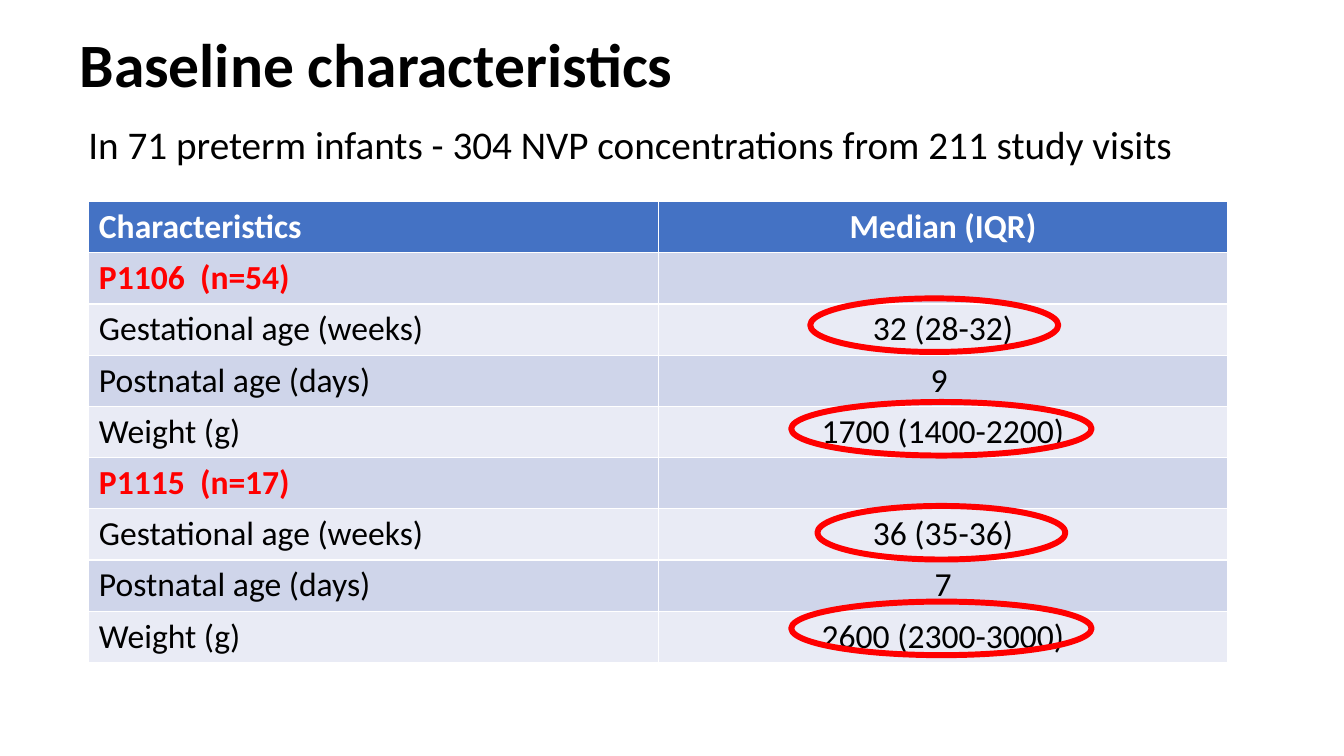
from dataclasses import dataclass
from lxml.etree import SubElement
from pptx import Presentation
from pptx.dml.color import RGBColor
from pptx.enum.shapes import MSO_SHAPE
from pptx.enum.text import MSO_ANCHOR, MSO_AUTO_SIZE, PP_ALIGN
from pptx.oxml.ns import qn
from pptx.util import Cm, Pt


@dataclass(frozen=True)
class Theme:
    font: str = "Calibri"
    title: int = 44
    body: int = 28
    cell: int = 24
    ring: float = 4.25
    black: str = "000000"
    white: str = "FFFFFF"
    red: str = "FF0000"
    head: str = "4472C4"
    bands: tuple = ("E9EBF5", "CFD5EA")


theme = Theme()


def style(para, size, color, bold=False):
    font = para.font
    font.name, font.size, font.bold = theme.font, Pt(size), bold
    font.color.rgb = RGBColor.from_string(color)


def place(shape, left, top, width, height):
    shape.left, shape.top = Cm(left), Cm(top)
    shape.width, shape.height = Cm(width), Cm(height)


deck = Presentation()
deck.slide_width, deck.slide_height = Cm(33.87), Cm(19.05)
slide = deck.slides.add_slide(deck.slide_layouts[1])

title = slide.shapes.title
body = slide.placeholders[1]
place(title, 1.75, -0.13, 29.21, 3.68)
place(body, 1.75, 3.05, 30.38, 16.38)
title.text_frame.text = "Baseline characteristics"
body.text_frame.text = " In 71 preterm infants - 304 NVP concentrations from 211 study visits"

for holder, size, anchor, gap in (
    (title, theme.title, MSO_ANCHOR.MIDDLE, 0),
    (body, theme.body, MSO_ANCHOR.TOP, 10),
):
    frame = holder.text_frame
    frame.word_wrap = True
    frame.auto_size = MSO_AUTO_SIZE.NONE
    frame.vertical_anchor = anchor
    para = frame.paragraphs[0]
    para.alignment = PP_ALIGN.LEFT
    para.line_spacing = 0.9
    para.space_before = Pt(gap)
    style(para, size, theme.black, holder is title)

props = body.text_frame.paragraphs[0]._p.get_or_add_pPr()
props.set("marL", "0")
props.set("indent", "0")
bullet = SubElement(props, qn("a:buNone"))
props.find(qn("a:defRPr")).addprevious(bullet)

rows = [
    ("Characteristics", "Median (IQR)"),
    ("P1106  (n=54)", ""),
    ("Gestational age (weeks)", "32 (28-32)"),
    ("Postnatal age (days)", "9 "),
    ("Weight (g)", "1700 (1400-2200)"),
    ("P1115  (n=17)", ""),
    ("Gestational age (weeks)", "36 (35-36)"),
    ("Postnatal age (days)", "7"),
    ("Weight (g)", "2600 (2300-3000)"),
]
step = 1.29
table = slide.shapes.add_table(
    len(rows), 2, Cm(2.24), Cm(5.08), Cm(28.7), Cm(step * len(rows))
).table
for r, row in enumerate(rows):
    table.rows[r].height = Cm(step)
    group = not row[1]
    color = theme.white if r == 0 else theme.red if group else theme.black
    fill = theme.head if r == 0 else theme.bands[r % 2]
    for c, text in enumerate(row):
        cell = table.cell(r, c)
        cell.text = text
        cell.fill.solid()
        cell.fill.fore_color.rgb = RGBColor.from_string(fill)
        para = cell.text_frame.paragraphs[0]
        para.alignment = PP_ALIGN.CENTER if c else PP_ALIGN.LEFT
        style(para, theme.cell, color, r == 0 or group)

for left, top, width in (
    (20.42, 7.52, 6.25),
    (19.94, 10.13, 7.57),
    (20.6, 12.75, 6.25),
    (19.94, 15.16, 7.57),
):
    ring = slide.shapes.add_shape(
        MSO_SHAPE.OVAL, Cm(left), Cm(top), Cm(width), Cm(1.35)
    )
    ring.shadow.inherit = False
    ring.fill.background()
    ring.line.color.rgb = RGBColor.from_string(theme.red)
    ring.line.width = Pt(theme.ring)

deck.save("out.pptx")
